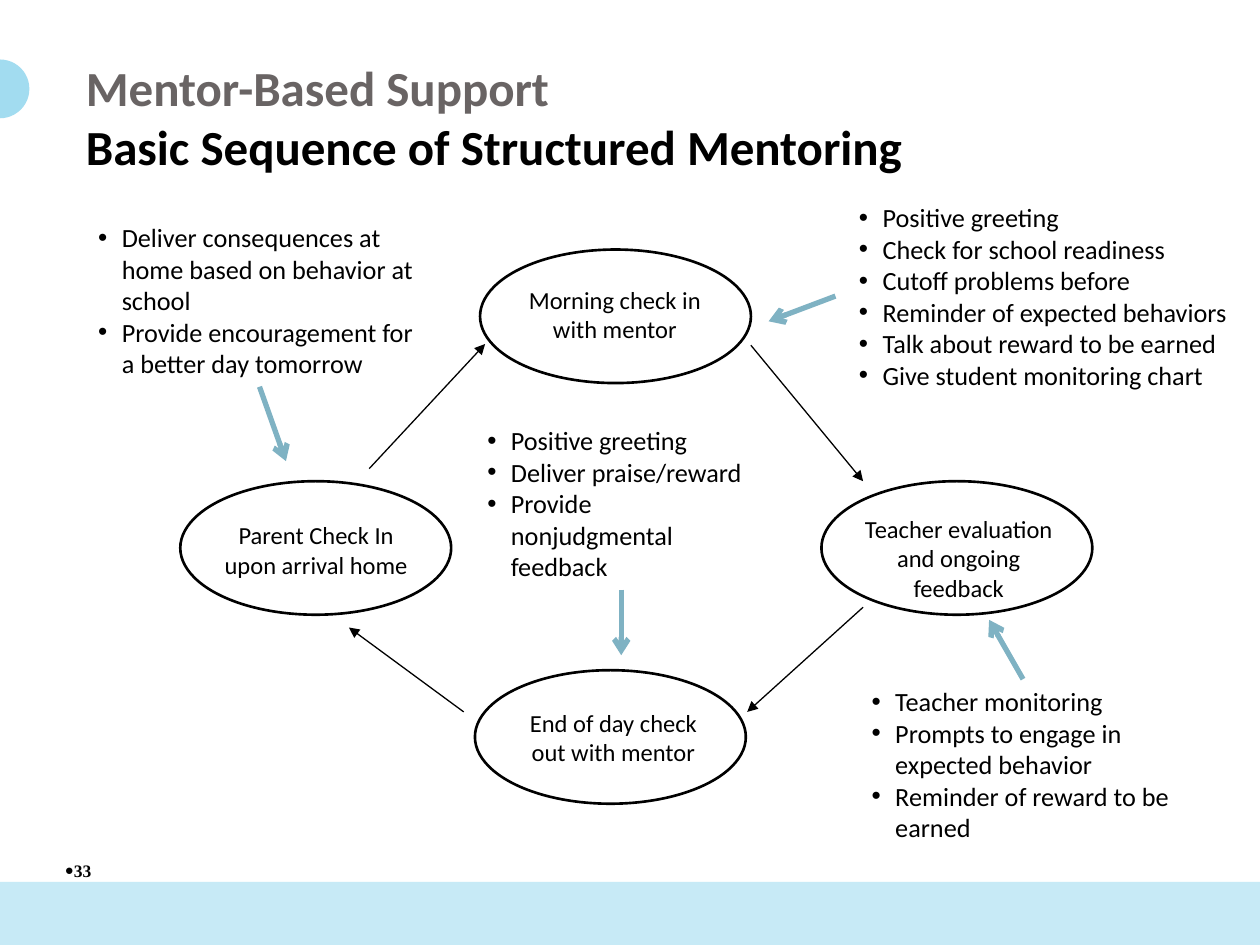
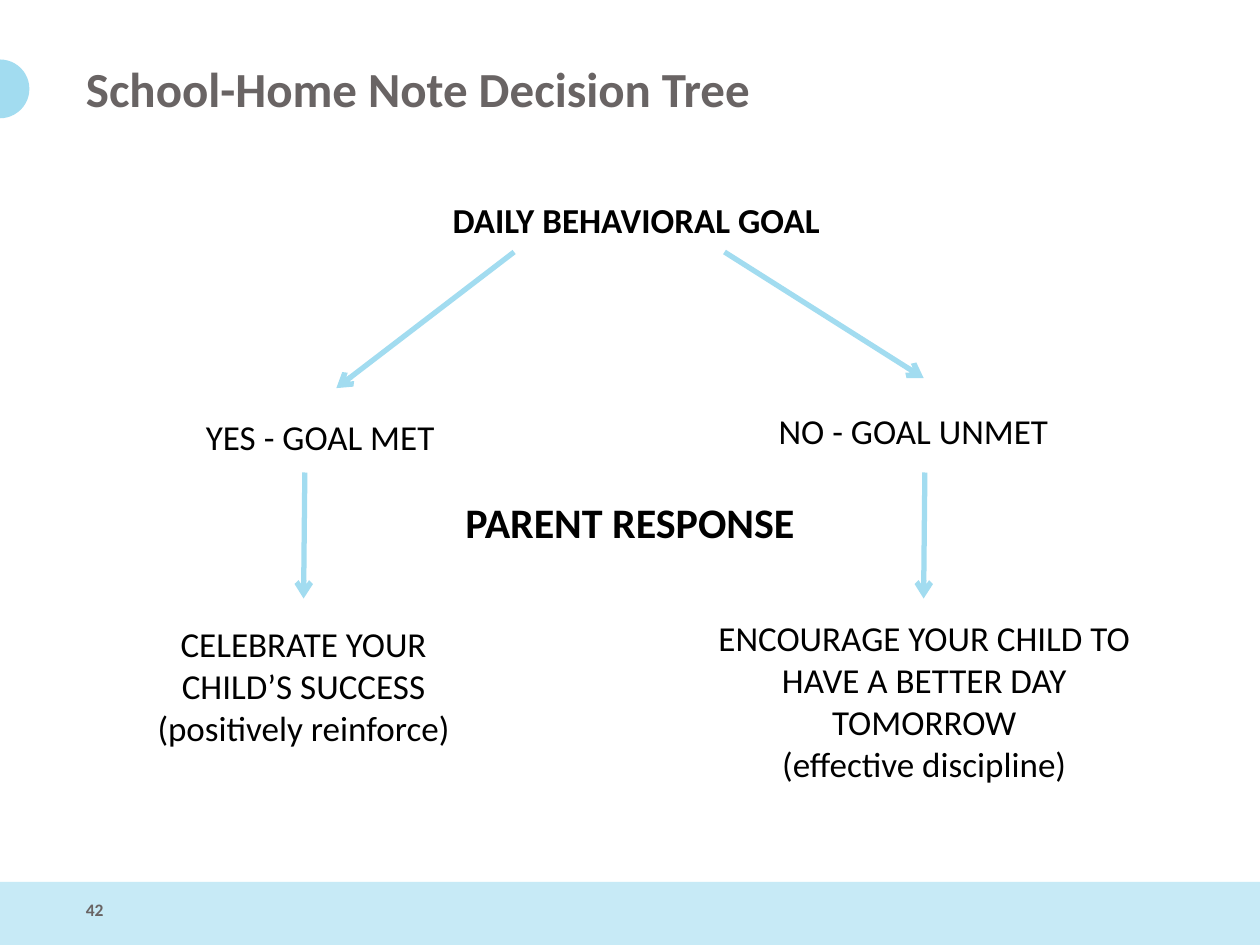
from dataclasses import dataclass
from typing import NamedTuple

from pptx import Presentation
from pptx.dml.color import RGBColor
from pptx.enum.shapes import MSO_CONNECTOR as Connector, MSO_SHAPE as Shape
from pptx.enum.text import MSO_ANCHOR as Anchor, PP_ALIGN as Align
from pptx.oxml.ns import qn
from pptx.util import Pt
from lxml.etree import SubElement


@dataclass(frozen=True)
class Theme:
    black: str = "000000"
    white: str = "FFFFFF"
    gray: str = "696464"
    band: str = "C7EAF6"
    sky: str = "A2DCF0"
    steel: str = "7FB2C3"
    font: str = "Calibri"
    serif: str = "Times New Roman"
    title: int = 28
    heading: int = 24
    branch: int = 20
    note: int = 15
    stage: int = 14
    number: int = 10


class Box(NamedTuple):
    left: float
    top: float
    width: float
    height: float

    def place(self, left, top, width, height):
        """Return a box whose position is measured from this one's corner."""
        return Box(self.left + left, self.top + top, width, height)

    def point(self, across, down):
        return self.left + across, self.top + down


THEME = Theme()
PAGE = Box(0, 0, 720, 540)


def rgb(color):
    return RGBColor.from_string(color)


def points(lengths):
    return [Pt(length) for length in lengths]


def add_bullet(para, symbol, hang, percent):
    properties = para._p.get_or_add_pPr()
    properties.set("marL", str(Pt(hang)))
    properties.set("indent", str(-Pt(hang)))
    SubElement(properties, qn("a:buSzPct"), val=str(percent * 1000))
    SubElement(properties, qn("a:buFont"), typeface="Arial")
    SubElement(properties, qn("a:buChar"), char=symbol)


def add_text(page, box, *lines, size, color=THEME.black, font=THEME.font, bold=False,
             align=Align.LEFT, anchor=Anchor.TOP, bottom=3.6,
             bullet=None, hang=13.5, percent=100):
    """Add a text box with one paragraph for each line."""
    frame = page.shapes.add_textbox(*points(box)).text_frame
    frame.word_wrap = True
    frame.vertical_anchor = anchor
    frame.margin_bottom = Pt(bottom)
    for index, line in enumerate(lines):
        para = frame.paragraphs[0] if index == 0 else frame.add_paragraph()
        para.alignment = align
        if bullet:
            add_bullet(para, bullet, hang, percent)
        span = para.add_run()
        span.text = line
        span.font.name = font
        span.font.size = Pt(size)
        span.font.bold = bold
        span.font.color.rgb = rgb(color)
    return frame


def add_figure(page, kind, box, fill, outline=None):
    figure = page.shapes.add_shape(kind, *points(box))
    figure.shadow.inherit = False
    figure.fill.solid()
    figure.fill.fore_color.rgb = rgb(fill)
    if outline:
        figure.line.color.rgb = rgb(outline)
        figure.line.width = Pt(1.5)
    else:
        figure.line.fill.background()


def add_arrow(page, start, end, color, width=3, head="arrow"):
    arrow = page.shapes.add_connector(Connector.STRAIGHT, *points(start + end))
    arrow.line.color.rgb = rgb(color)
    arrow.line.width = Pt(width)
    SubElement(arrow.line._get_or_add_ln(), qn("a:tailEnd"), type=head)
    SubElement(arrow._element.spPr, qn("a:effectLst"))


def add_page(deck):
    """Add a blank page with the shared bottom band and edge dot."""
    page = deck.slides.add_slide(deck.slide_layouts[6])
    add_figure(page, Shape.RECTANGLE, PAGE.place(0, 504, 720, 36), THEME.band)
    add_figure(page, Shape.OVAL, PAGE.place(-16.8, 34, 33.6, 33.6), THEME.sky)
    return page


def add_title(page, box, *lines):
    """Add a gray title; a second line is black."""
    frame = add_text(page, box, *lines, size=THEME.title, color=THEME.gray, bold=True,
                     anchor=Anchor.BOTTOM, bottom=7.2)
    for para in frame.paragraphs[1:]:
        para.runs[0].font.color.rgb = rgb(THEME.black)


def add_stage(page, box, label, shift):
    """Draw an oval with its label box shifted from the oval's corner."""
    add_figure(page, Shape.OVAL, box, THEME.white, THEME.black)
    add_text(page, box.place(*shift, 122.4, 44), label,
             size=THEME.stage, align=Align.CENTER)


def add_mentoring_cycle(page, box):
    stages = [
        ("Morning check in with mentor", (225.3, 32.6), (15.9, 16.5)),
        ("Teacher evaluation and ongoing feedback", (420.4, 165), (17.3, 15.2)),
        ("End of day check out with mentor", (222.4, 273), (18, 18)),
        ("Parent Check In upon arrival home", (54, 165), (16.5, 18.8)),
    ]
    for label, corner, shift in stages:
        add_stage(page, box.place(*corner, 154.8, 76.3), label, shift)

    steps = [
        ((380.1, 87.3), (444.2, 165)),
        ((444.2, 237), (378, 296.8)),
        ((216, 296.8), (150.4, 248.6)),
        ((162, 157.8), (228.2, 86.6)),
    ]
    for start, end in steps:
        add_arrow(page, box.point(*start), box.point(*end), THEME.black,
                  width=0.75, head="triangle")

    notes = [
        ((434.8, 1.6, 236, 116.6), (428.4, 59.2), (390.2, 73.6),
         ["Positive greeting", "Check for school readiness",
          "Cutoff problems before", "Reminder of expected behaviors",
          "Talk about reward to be earned", "Give student monitoring chart"]),
        ((442, 278.1, 186.5, 98), (535.6, 278.1), (516.2, 244.2),
         ["Teacher monitoring", "Prompts to engage in expected behavior",
          "Reminder of reward to be earned"]),
        ((222.4, 129, 167.8, 98), (306, 227), (306, 264.4),
         ["Positive greeting", "Deliver praise/reward",
          "Provide nonjudgmental feedback"]),
        ((0, 13.1, 198, 98), (99.3, 111), (114.4, 153.5),
         ["Deliver consequences at home based on behavior at school",
          "Provide encouragement for a better day tomorrow"]),
    ]
    for area, start, end, lines in notes:
        add_text(page, box.place(*area), *lines, size=THEME.note, bullet="•")
        add_arrow(page, box.point(*start), box.point(*end), THEME.steel)


def add_decision_tree(page, box):
    add_text(page, box.place(153.6, 0, 324, 32), "DAILY BEHAVIORAL GOAL",
             size=THEME.branch, bold=True, align=Align.CENTER)
    add_text(page, box.place(150, 170, 324, 37), "PARENT RESPONSE",
             size=THEME.heading, bold=True, align=Align.CENTER)

    outcomes = [
        ((0, 124, 270, 32), ["YES - GOAL MET"]),
        ((312, 120.4, 324, 32), ["NO - GOAL UNMET"]),
        ((17.5, 242, 216, 80), ["CELEBRATE YOUR CHILD’S SUCCESS (positively reinforce)"]),
        ((353.8, 238.5, 252.7, 128),
         ["ENCOURAGE YOUR CHILD TO HAVE A BETTER DAY TOMORROW",
          "(effective discipline)"]),
    ]
    for area, lines in outcomes:
        add_text(page, box.place(*area), *lines, size=THEME.branch, align=Align.CENTER)

    branches = [
        ((245.8, 34), (144.2, 111.8)),
        ((366, 34), (479.8, 106)),
        ((126.2, 160), (125.5, 232)),
        ((480.5, 160), (479.8, 232)),
    ]
    for start, end in branches:
        add_arrow(page, box.point(*start), box.point(*end), THEME.sky)


def build_mentoring_page(deck):
    page = add_page(deck)
    add_title(page, PAGE.place(42, 17.3, 612, 90),
              "Mentor-Based Support", "Basic Sequence of Structured Mentoring")
    add_mentoring_cycle(page, PAGE.place(49, 110, 671, 376))
    add_text(page, PAGE.place(30, 488, 30, 30), "33", size=THEME.number,
             font=THEME.serif, bold=True, bullet="●", hang=0, percent=85)


def build_decision_page(deck):
    page = add_page(deck)
    add_title(page, PAGE.place(42, 23.8, 600, 50.4), "School-Home Note Decision Tree")
    add_decision_tree(page, PAGE.place(48, 110, 636, 367))
    add_text(page, PAGE.place(42, 510, 45, 18), "42", size=THEME.number,
             color=THEME.gray, bold=True)


def main():
    deck = Presentation()
    deck.slide_width, deck.slide_height = points(PAGE[2:])
    build_mentoring_page(deck)
    build_decision_page(deck)
    deck.save("out.pptx")


if __name__ == "__main__":
    main()
